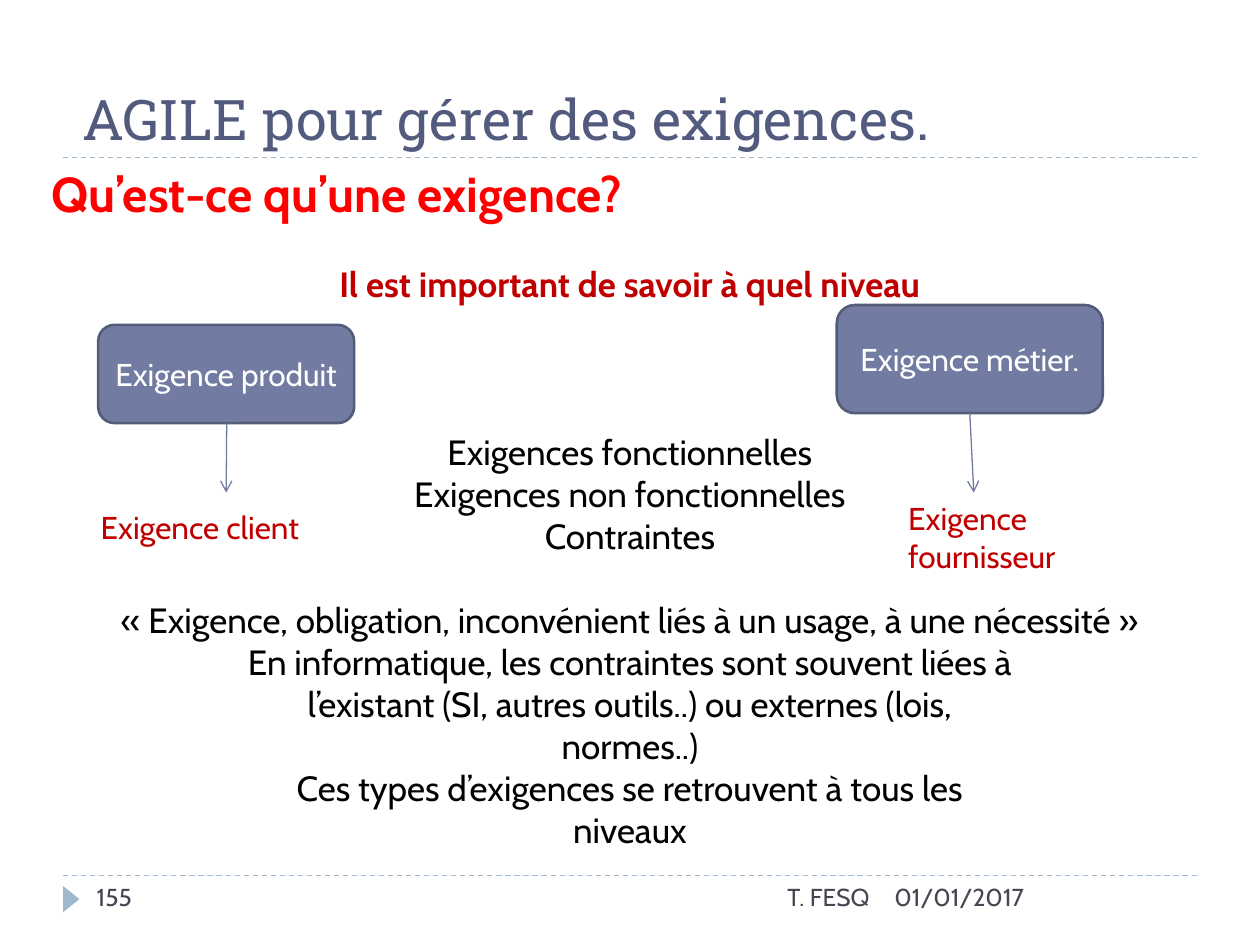
from dataclasses import dataclass

from lxml import etree
from pptx import Presentation
from pptx.dml.color import RGBColor
from pptx.enum.dml import MSO_LINE
from pptx.enum.shapes import MSO_CONNECTOR, MSO_SHAPE
from pptx.enum.text import MSO_ANCHOR, PP_ALIGN
from pptx.oxml.ns import qn
from pptx.slide import Slide
from pptx.util import Cm, Pt

LEFT, CENTER, RIGHT = PP_ALIGN.LEFT, PP_ALIGN.CENTER, PP_ALIGN.RIGHT
TOP, MIDDLE, BOTTOM = MSO_ANCHOR.TOP, MSO_ANCHOR.MIDDLE, MSO_ANCHOR.BOTTOM
STRAIGHT = MSO_CONNECTOR.STRAIGHT
ROUNDED, TRIANGLE = MSO_SHAPE.ROUNDED_RECTANGLE, MSO_SHAPE.ISOSCELES_TRIANGLE
DASH = MSO_LINE.DASH

TITLE_BLUE = RGBColor(0x52, 0x5B, 0x7E)
FOOTER_GREY = RGBColor(0x46, 0x46, 0x53)
RULE_BLUE = RGBColor(0x9F, 0xB8, 0xCD)
BOX_FILL = RGBColor(0x72, 0x7C, 0xA3)
BOX_EDGE = RGBColor(0x54, 0x5C, 0x79)
RED = RGBColor(0xFF, 0, 0)
DARK_RED = RGBColor(0xC0, 0, 0)
BLACK = RGBColor(0, 0, 0)
WHITE = RGBColor(0xFF, 0xFF, 0xFF)


@dataclass
class SlideBuilder:
    slide: Slide
    title_font: str = "Roboto Slab"
    body_font: str = "Cabin"

    def add_span(self, para, text, size, color, align=LEFT, bold=False, font=None):
        para.alignment = align
        span = para.add_run()
        span.text = text
        span.font.name = font or self.body_font
        span.font.size = Pt(size)
        span.font.bold = bold
        span.font.color.rgb = color

    def title(self, text, left, top, width, height):
        box = self.slide.shapes.title
        box.left, box.top, box.width, box.height = map(Cm, (left, top, width, height))
        box.text_frame.vertical_anchor = BOTTOM
        self.add_span(box.text_frame.paragraphs[0], text, 32, TITLE_BLUE,
                      font=self.title_font)

    def frame(self, left, top, width, height, wrap=True):
        """Add an empty text box and return its text frame."""
        box = self.slide.shapes.add_textbox(*map(Cm, (left, top, width, height)))
        box.text_frame.word_wrap = wrap
        box.text_frame.vertical_anchor = TOP
        return box.text_frame

    def label(self, text, place, size, color, align=LEFT, bold=False, wrap=True):
        para = self.frame(*place, wrap).paragraphs[0]
        self.add_span(para, text, size, color, align, bold)

    def stack(self, place, lines, size):
        """Add centred lines, each as (text, points before, colour, bold)."""
        frame = self.frame(*place)
        for index, (text, before, color, bold) in enumerate(lines):
            para = frame.add_paragraph() if index else frame.paragraphs[0]
            para.space_before = Pt(before)
            self.add_span(para, text, size, color, CENTER, bold)

    def shape(self, kind, place, fill, edge=None):
        shape = self.slide.shapes.add_shape(kind, *map(Cm, place))
        shape.shadow.inherit = False
        shape.fill.solid()
        shape.fill.fore_color.rgb = fill
        if edge is None:
            shape.line.fill.background()
        else:
            shape.line.color.rgb = edge
            shape.line.width = Pt(1.5)
        return shape

    def requirement(self, text, place):
        frame = self.shape(ROUNDED, place, BOX_FILL, BOX_EDGE).text_frame
        frame.word_wrap = True
        frame.vertical_anchor = MIDDLE
        self.add_span(frame.paragraphs[0], text, 18, WHITE, CENTER)

    def line(self, start, end, color):
        line = self.slide.shapes.add_connector(STRAIGHT, *map(Cm, start + end))
        line.line.color.rgb = color
        line.line.width = Pt(0.75)
        etree.SubElement(line._element.spPr, qn("a:effectLst"))
        return line

    def rule(self, y):
        self.line((1.27, y), (24.13, y), RULE_BLUE).line.dash_style = DASH

    def arrow(self, start, end):
        outline = self.line(start, end, BOX_FILL)._element.spPr.find(qn("a:ln"))
        etree.SubElement(outline, qn("a:tailEnd"), type="arrow")


def main():
    deck = Presentation()
    deck.slide_width, deck.slide_height = Cm(25.4), Cm(19.05)
    page = SlideBuilder(deck.slides.add_slide(deck.slide_layouts[5]))

    footer_top, title_bottom = 17.65, 3.18
    page.rule(footer_top)
    page.rule(title_bottom)
    page.shape(TRIANGLE, (1.17, 17.96, 0.53, 0.33), RULE_BLUE).rotation = 90
    page.title("AGILE pour gérer des exigences.", 1.4, 0, 22.86, title_bottom)

    for text, left, width, align in (
        ("01/01/2017", 17.78, 6.35, LEFT),
        ("T. FESQ", 8.05, 9.73, RIGHT),
        ("155", 1.7, 5.51, LEFT),
    ):
        page.label(text, (left, footer_top, width, 1.02), 14, FOOTER_GREY, align)

    page.label("Qu’est-ce qu’une exigence?", (0.79, title_bottom, 12.88, 1.45),
               28, RED, bold=True, wrap=False)

    line_gap = 24
    page.stack((0, 5.16, 25.4, 12.22), (
        ("Il est important de savoir à quel niveau", 0, DARK_RED, True),
        ("Exigences fonctionnelles", 3 * line_gap, BLACK, False),
        ("Exigences non fonctionnelles", 0, BLACK, False),
        ("Contraintes", 0, BLACK, False),
        ("« Exigence, obligation, inconvénient liés à un usage, à une nécessité »",
         line_gap, BLACK, False),
        ("En informatique, les contraintes sont souvent liées à", 0, BLACK, False),
        ("l’existant (SI, autres outils..) ou externes (lois,", 0, BLACK, False),
        ("normes..)", 0, BLACK, False),
        ("Ces types d’exigences se retrouvent à tous les", 0, BLACK, False),
        ("niveaux", 0, BLACK, False),
    ), 20)

    for source, place, start, end, target, target_place in (
        ("Exigence produit", (1.98, 6.55, 5.16, 1.98), (4.57, 8.53), (4.56, 9.93),
         "Exigence client", (1.78, 10.11, 5.77, 1.02)),
        ("Exigence métier.", (16.87, 6.15, 5.36, 2.18), (19.55, 8.33), (19.63, 9.93),
         "Exigence fournisseur", (18.06, 9.93, 4.78, 1.8)),
    ):
        page.requirement(source, place)
        page.arrow(start, end)
        page.label(target, target_place, 18, DARK_RED)

    deck.save("out.pptx")


if __name__ == "__main__":
    main()
